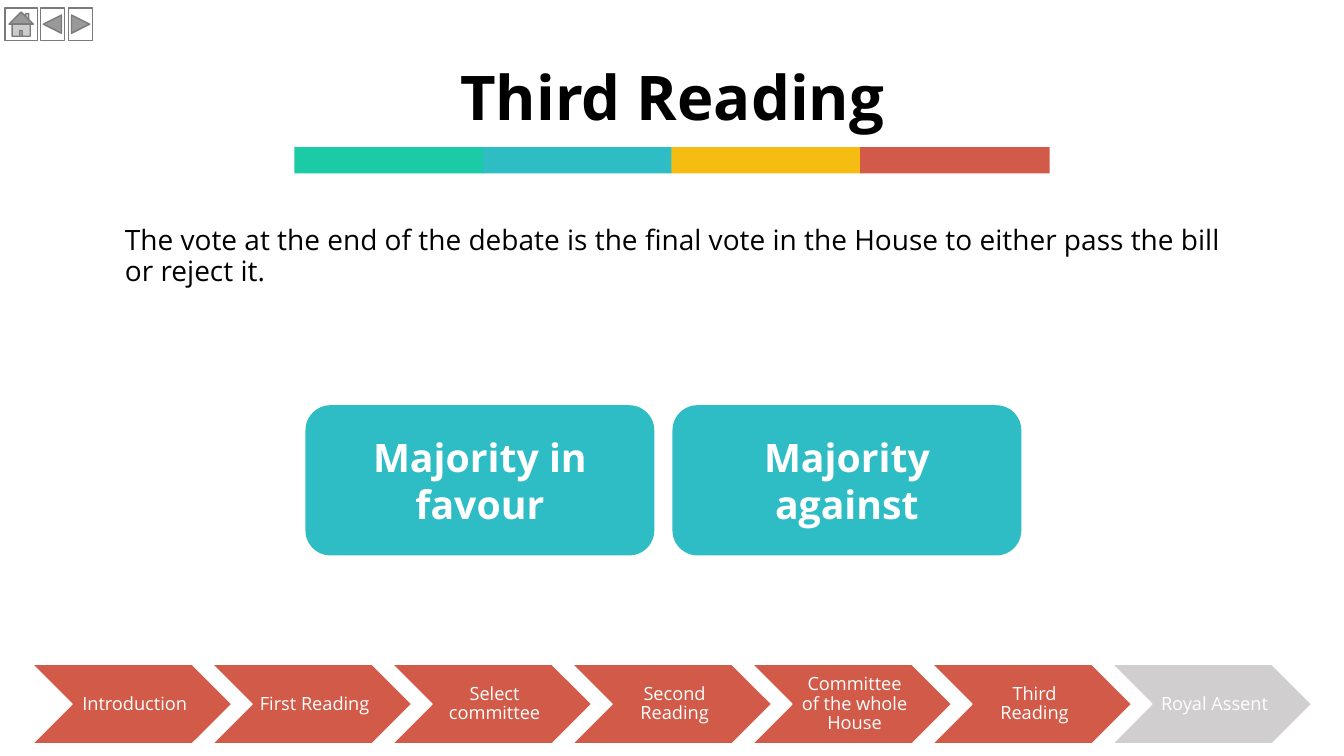
from pptx import Presentation
from pptx.dml.color import RGBColor
from pptx.enum.shapes import MSO_SHAPE as Shape
from pptx.enum.text import MSO_ANCHOR as Anchor, PP_ALIGN as Align
from pptx.util import Inches, Pt

FONT = "Open Sans"
BLACK, WHITE, GREY = "000000", "FFFFFF", "D0CECE"
GREEN, TEAL, YELLOW, RED = "1BCBA5", "2EBCC5", "F5BC11", "D15A49"
BUTTON_LINE = "7A7A7A"


def color(hex_code):
    return RGBColor.from_string(hex_code)


class SlideBuilder:
    def __init__(self, page):
        self.page = page

    def shape(self, kind, left, top, width, height, fill, line=None):
        shape = self.page.shapes.add_shape(
            kind, Inches(left), Inches(top), Inches(width), Inches(height))
        shape.shadow.inherit = False
        shape.fill.solid()
        shape.fill.fore_color.rgb = color(fill)
        if line:
            shape.line.color.rgb = color(line)
            shape.line.width = Pt(1)
        else:
            shape.line.fill.background()
        return shape

    def text_box(self, left, top, width, height):
        return self.page.shapes.add_textbox(
            Inches(left), Inches(top), Inches(width), Inches(height))

    def add_text(self, shape, text, size, ink=WHITE, bold=False, align=Align.CENTER,
                 anchor=Anchor.MIDDLE, spacing=0.9, insets=(0.1, 0.05, 0.1, 0.05)):
        frame = shape.text_frame
        frame.word_wrap = True
        frame.vertical_anchor = anchor
        (frame.margin_left, frame.margin_top,
         frame.margin_right, frame.margin_bottom) = map(Inches, insets)
        para = frame.paragraphs[0]
        para.alignment = align
        para.line_spacing = spacing
        span = para.add_run()
        span.text = text
        span.font.name = FONT
        span.font.size = Pt(size)
        span.font.bold = bold
        span.font.color.rgb = color(ink)


def main():
    deck = Presentation()
    deck.slide_width, deck.slide_height = Inches(13.33), Inches(7.5)
    builder = SlideBuilder(deck.slides.add_slide(deck.slide_layouts[6]))

    title = builder.text_box(0.92, 0.27, 11.5, 1.45)
    builder.add_text(title, "Third Reading", 44, BLACK, bold=True)

    body = builder.text_box(1.14, 2.2, 11.09, 4.51)
    builder.add_text(
        body,
        "The vote at the end of the debate is the final vote in the House "
        "to either pass the bill or reject it.",
        20, BLACK, align=Align.LEFT, anchor=Anchor.TOP)

    band_width = 1.87
    for index, fill in enumerate((GREEN, TEAL, YELLOW, RED)):
        builder.shape(Shape.RECTANGLE, 2.92 + index * band_width, 1.46,
                      band_width + 0.01, 0.26, fill)

    for left, outcome in ((3.03, "Majority in favour"), (6.67, "Majority against")):
        choice = builder.shape(Shape.ROUNDED_RECTANGLE, left, 4.02, 3.46, 1.49, TEAL)
        builder.add_text(choice, outcome, 28, bold=True, spacing=1.0)

    for kind, left, width in (
            (Shape.ACTION_BUTTON_HOME, 0.05, 0.32),
            (Shape.ACTION_BUTTON_BACK_OR_PREVIOUS, 0.4, 0.24),
            (Shape.ACTION_BUTTON_FORWARD_OR_NEXT, 0.68, 0.24)):
        builder.shape(kind, left, 0.08, width, 0.32, WHITE, BUTTON_LINE)

    stages = ("Introduction", "First Reading", "Select committee", "Second Reading",
              "Committee of the whole House", "Third Reading", "Royal Assent")
    stage_top, stage_height = 6.59, 0.79
    stage_pitch = (11.03 - 0.32) / (len(stages) - 1)
    for index, stage in enumerate(stages):
        left = 0.32 + index * stage_pitch
        fill = GREY if stage == "Royal Assent" else RED
        builder.shape(Shape.CHEVRON, left, stage_top, 1.98, stage_height, fill, WHITE)
        label = builder.text_box(left + 0.4, stage_top, 1.19, stage_height)
        builder.add_text(label, stage, 13, insets=(0.06, 0.02, 0.02, 0.02))

    deck.save("out.pptx")


if __name__ == "__main__":
    main()
